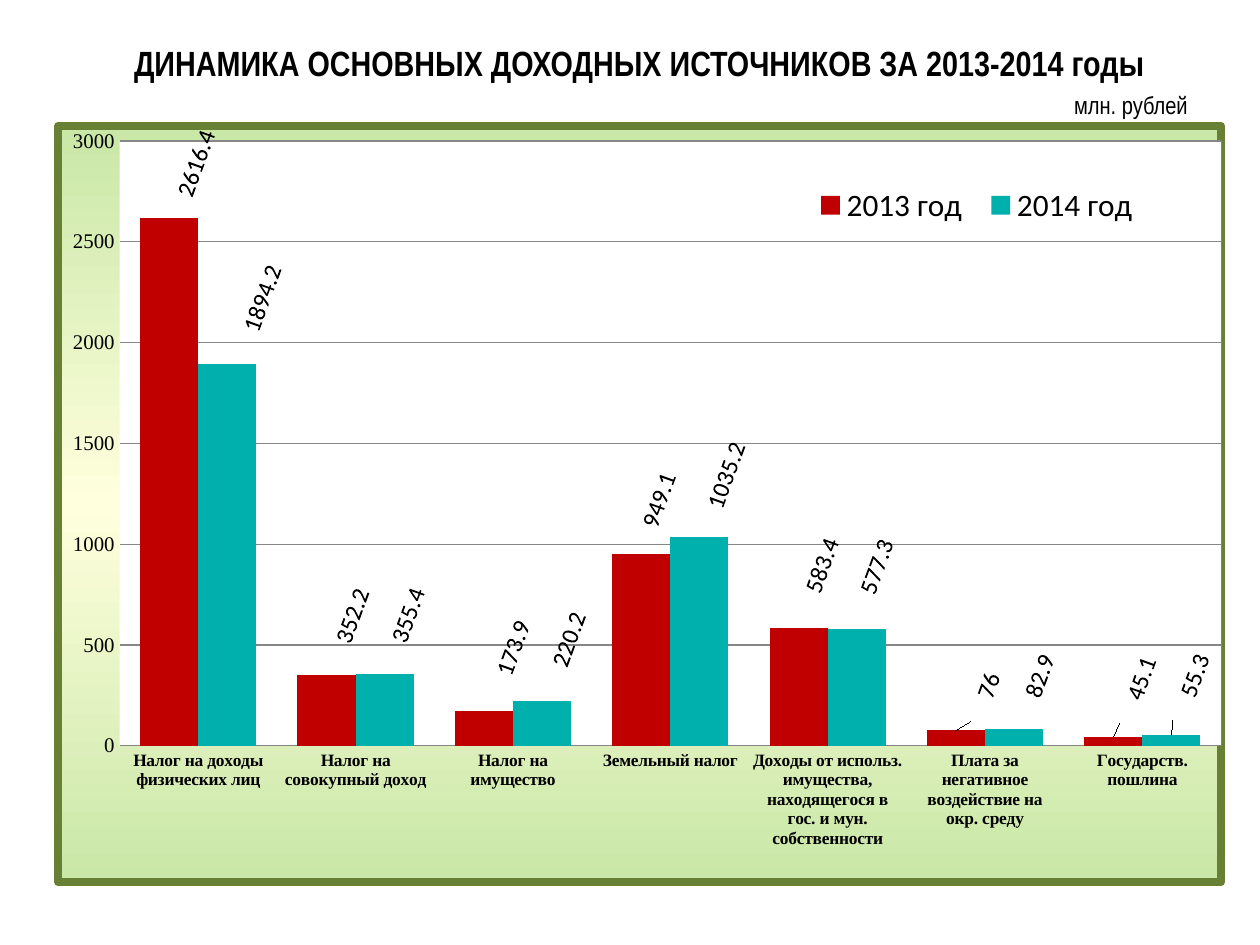
from lxml import etree
from pptx import Presentation
from pptx.chart.data import CategoryChartData
from pptx.dml.color import RGBColor
from pptx.enum.chart import XL_CHART_TYPE as CT, XL_LABEL_POSITION as LP
from pptx.enum.chart import XL_LEGEND_POSITION as LEG, XL_TICK_MARK as TM
from pptx.enum.text import MSO_ANCHOR, PP_ALIGN
from pptx.oxml import parse_xml
from pptx.oxml.ns import qn
from pptx.util import Emu, Pt

COLORS = {"text": "000000", "y2013": "C00000", "y2014": "00B0AC", "plot": "FFFFFF",
          "edge": "C9E7A7", "middle": "FFFFDD", "border": "678034", "grid": "868686"}
NS = ('xmlns:c="http://schemas.openxmlformats.org/drawingml/2006/chart" '
      'xmlns:a="http://schemas.openxmlformats.org/drawingml/2006/main"')
CHART_BOX = (54, 122, 1171, 764)
CATEGORIES = [
    "Налог на доходы физических лиц", "Налог на совокупный доход", "Налог на имущество",
    "Земельный налог", "Доходы от использ. имущества, находящегося в гос. и мун. собственности",
    "Плата за негативное воздействие на окр. среду", "Государств. пошлина"]
SERIES = [
    ("2013 год", "y2013", "General", [2616.4, 352.2, 173.9, 949.1, 583.4, 76, 45.1],
     [(27, -13), (26, -23), (29, -27), (18, -18), (23, -27), (33, -24), (28, -28)]),
    ("2014 год", "y2014", "0.0", [1894.2, 355.4, 220.2, 1035.2, 577.3, 82.9, 55.3],
     [(35, -24), (24, -23), (27, -26), (27, -20), (20, -27), (26, -23), (23, -29)])]


def px(n):
    return Emu(round(n * 914400 / 126))


def rgb(name):
    return RGBColor.from_string(COLORS[name])


def layout(x, y, w=None, h=None, inner=False):
    root = etree.Element(qn("c:layout"))
    manual = etree.SubElement(root, qn("c:manualLayout"))
    parts = [("layoutTarget", "inner")] if inner else []
    if w is not None:
        parts += [("xMode", "edge"), ("yMode", "edge")]
    parts += [("x", x), ("y", y)]
    if w is not None:
        parts += [("w", w), ("h", h)]
    for tag, val in parts:
        etree.SubElement(manual, qn(f"c:{tag}")).set("val", str(val))
    return root


class Deck:
    title_font, axis_font, chart_font = "Arial Narrow", "Times New Roman", "Calibri"

    def __init__(self, prs):
        self.s = prs.slides.add_slide(prs.slide_layouts[6])

    def style(self, font, size, name, bold=False):
        font.size, font.name, font.bold = Pt(size), name, bold
        font.color.rgb = rgb("text")

    def text(self, box, words, size, bold=False, spacing=1.0):
        tf = self.s.shapes.add_textbox(*map(px, box)).text_frame
        tf.word_wrap = True
        tf.vertical_anchor = MSO_ANCHOR.MIDDLE
        p = tf.paragraphs[0]
        p.text, p.alignment, p.line_spacing = words, PP_ALIGN.CENTER, spacing
        self.style(p.font, size, self.title_font, bold)

    def chart(self, box):
        data = CategoryChartData()
        data.categories = CATEGORIES
        for name, _, _, values, _ in SERIES:
            data.add_series(name, values)
        chart = self.s.shapes.add_chart(CT.COLUMN_CLUSTERED, *map(px, box), data).chart
        self.style(chart.font, 18, self.chart_font)
        chart.has_title = False
        self.axes(chart)
        plot = chart.plots[0]
        plot.gap_width, plot.overlap, plot.vary_by_categories = 71, 0, False
        for ser, (_, color, fmt, _, offsets) in zip(plot.series, SERIES):
            ser.format.fill.solid()
            ser.format.fill.fore_color.rgb = rgb(color)
            self.labels(ser, fmt, offsets, box)
        self.legend(chart)
        self.backgrounds(chart)

    def axes(self, chart):
        cat, val = chart.category_axis, chart.value_axis
        for axis, size, bold in ((cat, 10, True), (val, 12, False)):
            axis.major_tick_mark = axis.minor_tick_mark = TM.NONE
            self.style(axis.tick_labels.font, size, self.axis_font, bold)
        cat.format.line.color.rgb = rgb("grid")
        val.format.line.fill.background()
        val.minimum_scale, val.maximum_scale, val.major_unit = 0, 3000, 500
        val.has_major_gridlines = True
        val.major_gridlines.format.line.color.rgb = rgb("grid")

    def labels(self, ser, fmt, offsets, box):
        labels = ser.data_labels
        labels.show_value = True
        labels.number_format, labels.number_format_is_linked = fmt, False
        self.style(labels.font, 14, self.chart_font)
        for i, (dx, dy) in enumerate(offsets):
            label = ser.points[i].data_label
            self.style(label.font, 14, self.chart_font)
            label.position = LP.OUTSIDE_END
        for dlbl, (dx, dy) in zip(ser._element.iter(qn("c:dLbl")), offsets):
            dlbl.find(qn("c:idx")).addnext(layout(round(dx / box[2], 3), round(dy / box[3], 3)))
        for body in labels._element.iter(qn("a:bodyPr")):
            body.set("rot", "-4200000")
            body.set("vert", "horz")

    def legend(self, chart):
        chart.has_legend = True
        chart.legend.position = LEG.BOTTOM
        chart.legend.include_in_layout = False
        self.style(chart.legend.font, 18, self.chart_font)
        el = chart.legend._element
        for old in el.findall(qn("c:layout")):
            el.remove(old)
        el.find(qn("c:legendPos")).addnext(layout(0.64, 0.07, 0.3, 0.07))

    def backgrounds(self, chart):
        area = chart._chartSpace.find(qn("c:chart"))
        stops = "".join(f'<a:gs pos="{pos}"><a:srgbClr val="{COLORS[c]}"/></a:gs>'
                        for pos, c in ((0, "edge"), (50000, "middle"), (100000, "edge")))
        area.addnext(parse_xml(
            f'<c:spPr {NS}><a:gradFill><a:gsLst>{stops}</a:gsLst><a:lin ang="5400000" scaled="0"/>'
            f'</a:gradFill><a:ln w="{Pt(4.5)}"><a:solidFill><a:srgbClr val="{COLORS["border"]}"/>'
            '</a:solidFill></a:ln></c:spPr>'))
        plot = area.find(qn("c:plotArea"))
        for old in plot.findall(qn("c:layout")):
            plot.remove(old)
        plot.insert(0, layout(0.053, 0.02, 0.947, 0.8, inner=True))
        plot.append(parse_xml(f'<c:spPr {NS}><a:solidFill><a:srgbClr val="{COLORS["plot"]}"/>'
                              '</a:solidFill><a:ln><a:noFill/></a:ln></c:spPr>'))


def main():
    prs = Presentation()
    prs.slide_width, prs.slide_height = px(1260), px(945)
    deck = Deck(prs)
    deck.text((54, 16, 1171, 84), "ДИНАМИКА ОСНОВНЫХ ДОХОДНЫХ ИСТОЧНИКОВ ЗА 2013-2014 годы",
              20, bold=True, spacing=1.2)
    deck.chart(CHART_BOX)
    deck.text((1036, 86, 190, 38), "млн. рублей", 14)
    prs.save("out.pptx")


if __name__ == "__main__":
    main()
